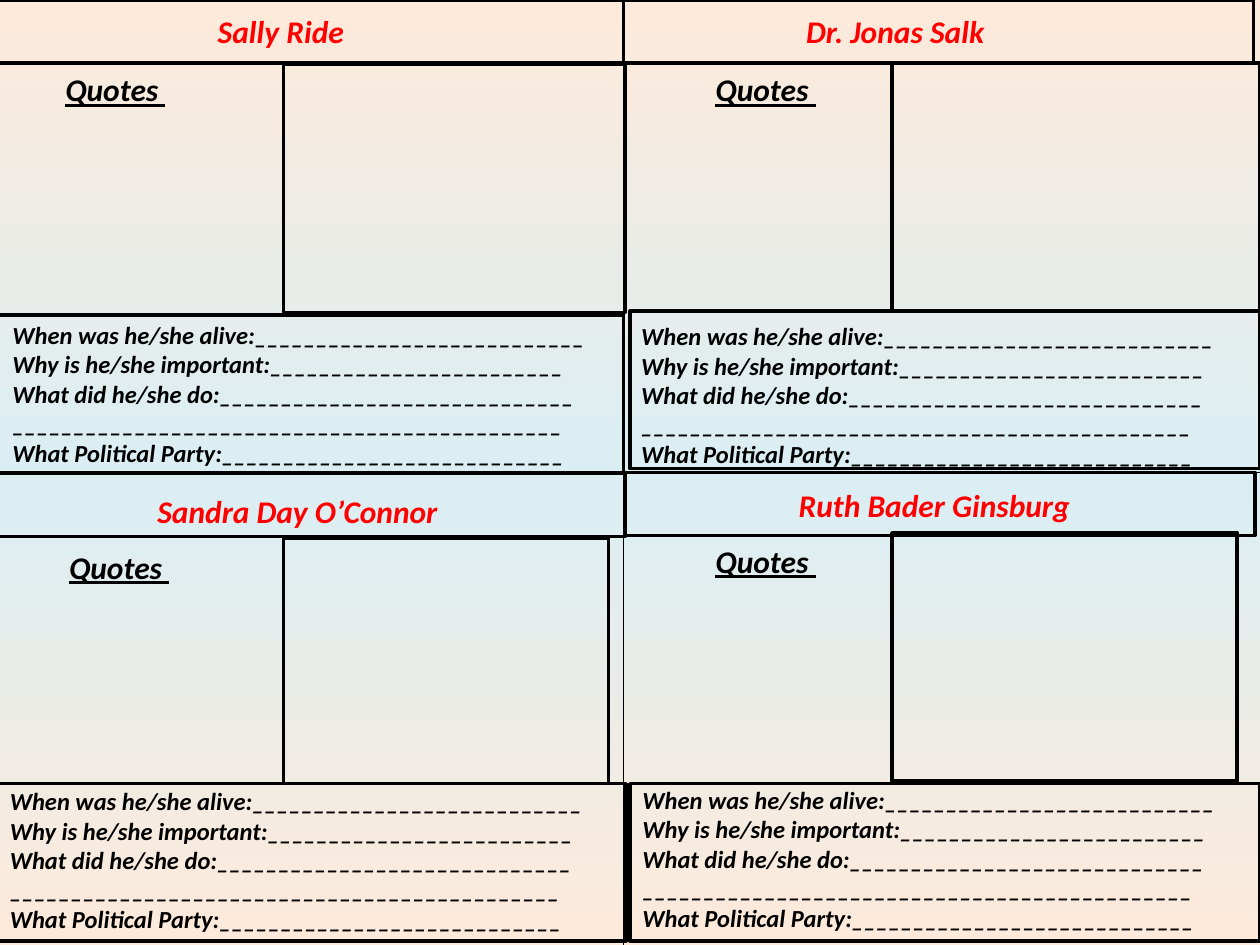
from copy import deepcopy
from dataclasses import dataclass

from pptx import Presentation
from pptx.dml.color import RGBColor
from pptx.enum.shapes import MSO_CONNECTOR, MSO_SHAPE
from pptx.enum.text import MSO_AUTO_SIZE
from pptx.oxml.ns import qn
from pptx.oxml.xmlchemy import OxmlElement
from pptx.slide import Slide
from pptx.util import Inches, Pt

COLORS = {"ink": "000000", "name": "FF0000", "peach": "FDEADA", "sky": "DBEEF4"}
FONT = "Calibri"
PANEL_WIDTH = 5
HEADER_HEIGHT = 0.5
FACTS_HEIGHT = 1.25


@dataclass(frozen=True)
class Area:
    left: float
    top: float
    width: float
    height: float

    def lengths(self) -> tuple:
        return tuple(Inches(v) for v in (self.left, self.top, self.width, self.height))


@dataclass(frozen=True)
class Person:
    name: str
    name_area: Area
    header: tuple[float, float]
    quotes: tuple[float, float]
    portrait: Area
    facts_frame: tuple[float, float]
    facts_text: tuple[float, float]
    importance_blanks: int = 25


PEOPLE = [
    Person("Sally Ride", Area(1.63, 0.05, 1.27, 0.4), (-0.05, 0), (0.42, 0.51),
           Area(2.25, 0.51, 2.71, 1.97), (-0.05, 2.5), (0, 2.49), 24),
    Person("Dr. Jonas Salk", Area(6.3, 0.05, 1.63, 0.4), (4.95, 0), (5.58, 0.51),
           Area(7.08, 0.5, 2.92, 1.97), (5, 2.47), (4.99, 2.5)),
    Person("Sandra Day O’Connor", Area(1.15, 3.86, 2.45, 0.4), (-0.04, 3.76), (0.45, 4.3),
           Area(2.25, 4.27, 2.58, 1.95), (-0.03, 6.22), (-0.02, 6.19)),
    Person("Ruth Bader Ginsburg", Area(6.24, 3.81, 2.37, 0.4), (4.96, 3.75), (5.58, 4.25),
           Area(7.08, 4.23, 2.74, 1.97), (5, 6.22), (5, 6.18)),
]


def color(key: str) -> RGBColor:
    return RGBColor.from_string(COLORS[key])


def paint_background(page: Slide) -> None:
    """Fade vertically from peach to sky and back to peach."""
    fill = page.background.fill
    fill.gradient()
    fill.gradient_angle = 270
    stop_list = page.element.find(".//" + qn("a:gsLst"))
    stop_list.insert(1, deepcopy(stop_list[0]))
    for stop, position, key in zip(fill.gradient_stops, (0, 0.5, 1), ("peach", "sky", "peach")):
        stop.position = position
        stop.color.rgb = color(key)


def add_divider(page: Slide, start: tuple[float, float], end: tuple[float, float]) -> None:
    ends = [Inches(value) for value in (*start, *end)]
    divider = page.shapes.add_connector(MSO_CONNECTOR.STRAIGHT, *ends)
    divider.line.color.rgb = color("ink")
    divider.line.width = Pt(0.75)
    divider._element.spPr.append(OxmlElement("a:effectLst"))


def add_frame(page: Slide, area: Area) -> None:
    frame = page.shapes.add_shape(MSO_SHAPE.RECTANGLE, *area.lengths())
    frame.shadow.inherit = False
    frame.fill.background()
    frame.line.color.rgb = color("ink")
    frame.line.width = Pt(2)


def add_text(page: Slide, area: Area, text: str, size: int, color_key: str = "ink",
             underline: bool = False, wrap: bool = False) -> None:
    box = page.shapes.add_textbox(*area.lengths())
    text_frame = box.text_frame
    text_frame.text = text
    text_frame.word_wrap = wrap
    text_frame.auto_size = MSO_AUTO_SIZE.SHAPE_TO_FIT_TEXT
    for paragraph in text_frame.paragraphs:
        for span in paragraph.runs:
            font = span.font
            font.name, font.size = FONT, Pt(size)
            font.bold = font.italic = True
            font.color.rgb = color(color_key)
            if underline:
                font.underline = True


def fact_lines(importance_blanks: int) -> str:
    prompts = [
        ("When was he/she alive:", 27),
        ("Why is he/she important:", importance_blanks),
        ("What did he/she do:", 29),
        ("", 45),
        ("What Political Party:", 28),
    ]
    return "\n".join(prompt + "_" * blanks for prompt, blanks in prompts)


def add_person(page: Slide, person: Person) -> None:
    add_frame(page, Area(*person.header, PANEL_WIDTH, HEADER_HEIGHT))
    add_frame(page, person.portrait)
    add_frame(page, Area(*person.facts_frame, PANEL_WIDTH, FACTS_HEIGHT))
    add_text(page, person.name_area, person.name, 18, "name")
    add_text(page, Area(*person.quotes, 1.01, 0.4), "Quotes ", 18, underline=True)
    add_text(page, Area(*person.facts_text, PANEL_WIDTH, 1.28),
             fact_lines(person.importance_blanks), 14, wrap=True)


def main() -> None:
    deck = Presentation()
    deck.slide_width, deck.slide_height = Inches(10), Inches(7.5)
    page = deck.slides.add_slide(deck.slide_layouts[6])
    paint_background(page)
    add_divider(page, (4.95, 0), (4.95, 7.5))
    add_divider(page, (0, 3.75), (10, 3.75))
    for person in PEOPLE:
        add_person(page, person)
    deck.save("out.pptx")


if __name__ == "__main__":
    main()
